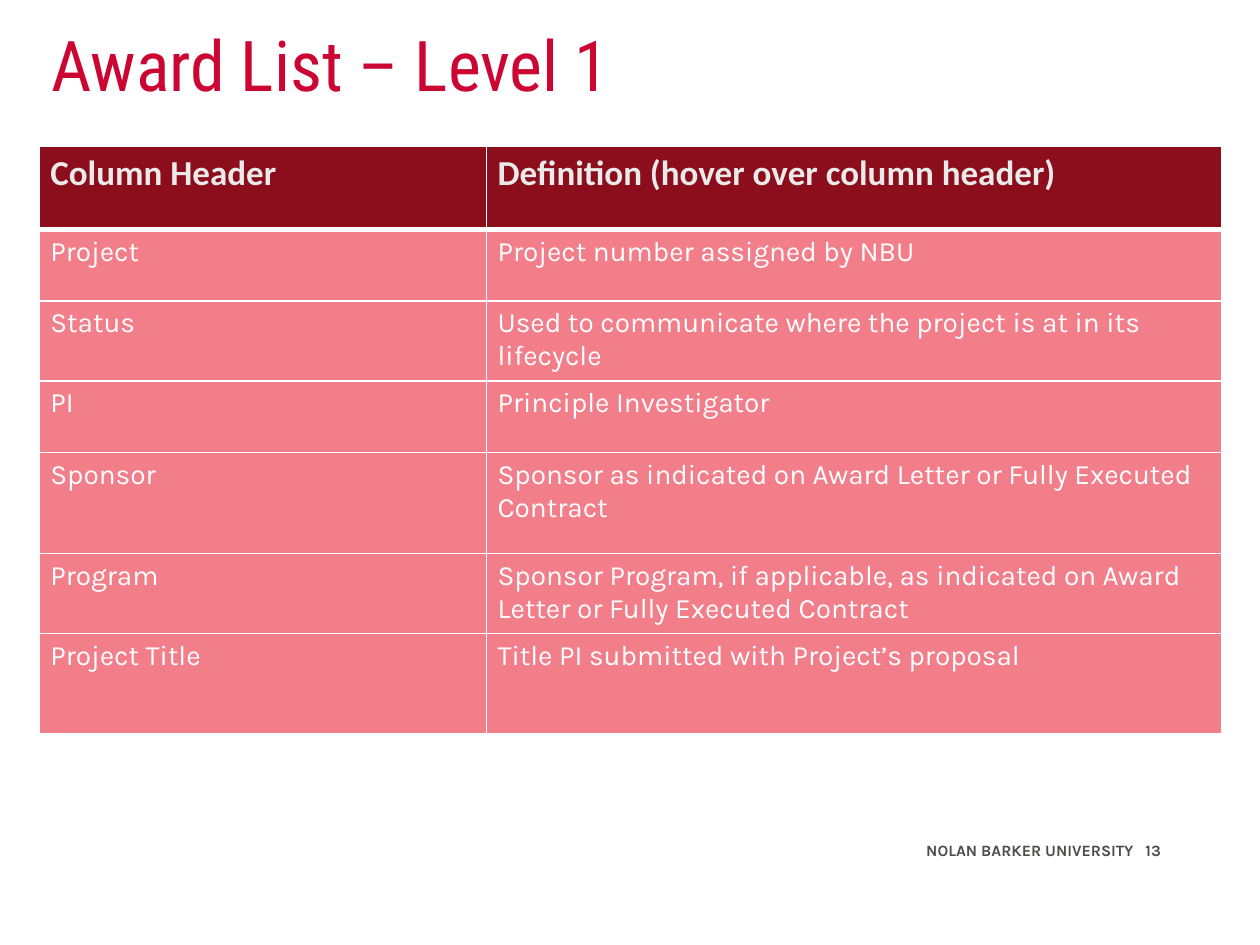
from pptx import Presentation
from pptx.dml.color import RGBColor
from pptx.enum.text import MSO_ANCHOR, PP_ALIGN
from pptx.oxml import parse_xml
from pptx.oxml.ns import nsdecls
from pptx.util import Inches, Pt

COLOURS = {
    "title": "CC0633",
    "footer": "4D4D4C",
    "header_fill": "8C0E1C",
    "header_text": "EAEAEA",
    "body_fill": "F27E8A",
    "white": "FFFFFF",
}


def write_text(text_frame, text, *, font, size, colour, bold=False,
               align=PP_ALIGN.LEFT, line_spacing=None):
    text_frame.word_wrap = True
    paragraph = text_frame.paragraphs[0]
    paragraph.alignment = align
    if line_spacing:
        paragraph.line_spacing = line_spacing
    run = paragraph.add_run()
    run.text = text
    run.font.name = font
    run.font.size = Pt(size)
    run.font.bold = bold
    run.font.color.rgb = RGBColor.from_string(COLOURS[colour])


def set_borders(cell, bottom=1, top=1):
    """Draw white cell borders; bottom and top are widths in points."""
    properties = cell._tc.get_or_add_tcPr()
    widths = {"lnL": 1, "lnR": 1, "lnT": top, "lnB": bottom}
    for position, (side, width) in enumerate(widths.items()):
        properties.insert(position, parse_xml(
            f'<a:{side} {nsdecls("a")} w="{Pt(width)}"><a:solidFill>'
            f'<a:srgbClr val="{COLOURS["white"]}"/></a:solidFill></a:{side}>'))


presentation = Presentation()
presentation.slide_width = Inches(10)
presentation.slide_height = Inches(7.5)
slide = presentation.slides.add_slide(presentation.slide_layouts[6])

# Title and footer
title = slide.shapes.add_textbox(Inches(0.31), Inches(0.22), Inches(8.62), Inches(0.66))
title.text_frame.vertical_anchor = MSO_ANCHOR.MIDDLE
write_text(title.text_frame, "Award List – Level 1", font="Roboto Condensed",
           size=40, colour="title", line_spacing=0.9)

footer = slide.shapes.add_textbox(Inches(6.6), Inches(6.55), Inches(2.71), Inches(0.4))
footer.text_frame.vertical_anchor = MSO_ANCHOR.MIDDLE
write_text(footer.text_frame, "NOLAN BARKER UNIVERSITY   13", font="Karla",
           size=9, colour="footer", bold=True, align=PP_ALIGN.RIGHT)

# Column definitions
rows = [
    (0.66, "Column Header", "Definition (hover over column header)"),
    (0.57, "Project", "Project number assigned by NBU"),
    (0.57, "Status", "Used to communicate where the project is at in its lifecycle"),
    (0.57, "PI", "Principle Investigator"),
    (0.8, "Sponsor", "Sponsor as indicated on Award Letter or Fully Executed Contract"),
    (0.58, "Program", "Sponsor Program, if applicable, as indicated on Award Letter "
                      "or Fully Executed Contract"),
    (0.8, "Project Title", "Title PI submitted with Project’s proposal"),
]
column_widths = [3.55, 5.84]
header_format = {"font": "Calibri", "size": 20, "colour": "header_text", "bold": True}
body_format = {"font": "Karla", "size": 16, "colour": "white"}

table = slide.shapes.add_table(
    len(rows), len(column_widths), Inches(0.31), Inches(1.16),
    Inches(sum(column_widths)), Inches(sum(row[0] for row in rows))).table
for column, width in zip(table.columns, column_widths):
    column.width = Inches(width)

for row_index, (height, *texts) in enumerate(rows):
    table.rows[row_index].height = Inches(height)
    is_header = row_index == 0
    for column_index, text in enumerate(texts):
        cell = table.cell(row_index, column_index)
        cell.margin_left = cell.margin_right = Inches(0.09)
        cell.margin_top = cell.margin_bottom = Inches(0.05)
        cell.fill.solid()
        cell.fill.fore_color.rgb = RGBColor.from_string(
            COLOURS["header_fill" if is_header else "body_fill"])
        set_borders(cell, bottom=3 if is_header else 1, top=3 if row_index == 1 else 1)
        write_text(cell.text_frame, text, **(header_format if is_header else body_format))

presentation.save("out.pptx")
